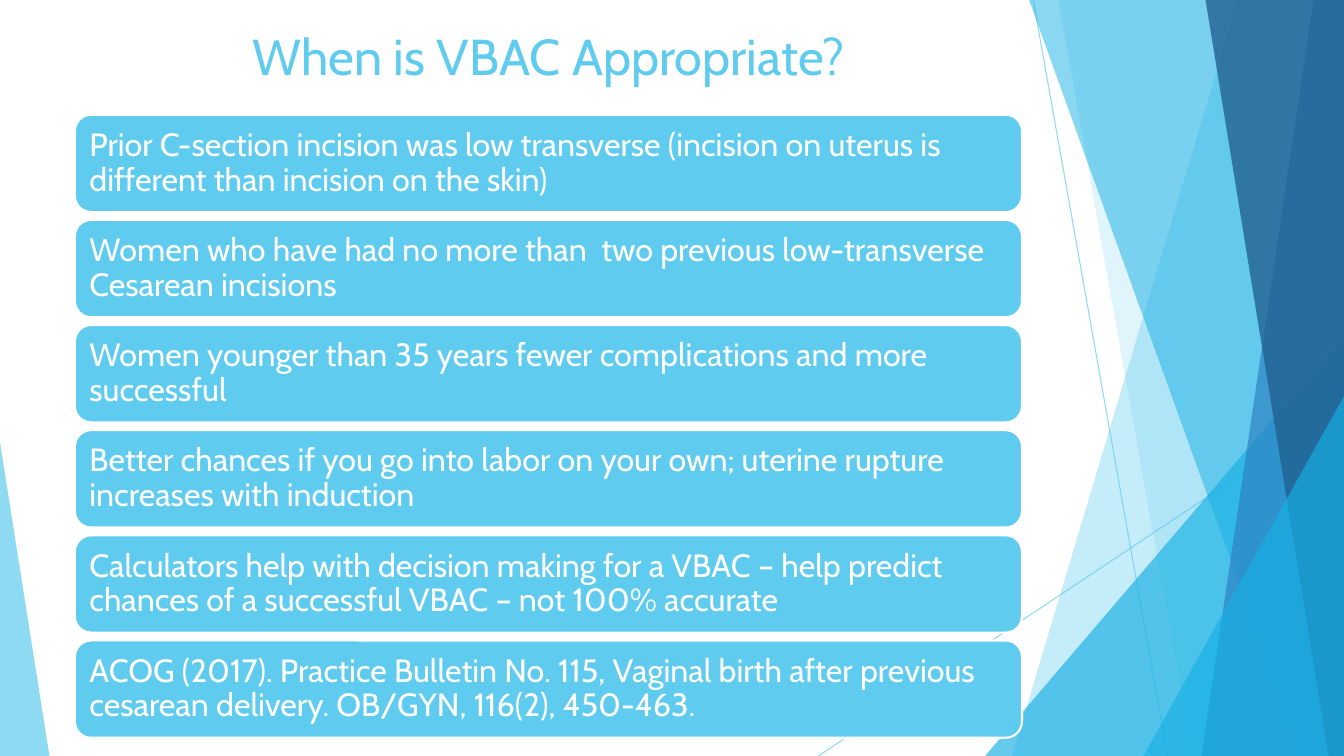
from lxml.etree import SubElement
from pptx import Presentation
from pptx.dml.color import RGBColor as RGB
from pptx.enum.shapes import MSO_CONNECTOR as CONNECTOR, MSO_SHAPE as SHAPE
from pptx.enum.text import MSO_ANCHOR as ANCHOR, PP_ALIGN as ALIGN
from pptx.oxml.ns import qn
from pptx.util import Pt

COLORS = {
    "sky": "5FCBEF",
    "cyan": "17B0E4",
    "blue": "2E83C3",
    "navy": "226292",
    "white": "FFFFFF",
}
FONT = "Cabin"
WIDTH, HEIGHT = 960, 540


def set_alpha(item, percent):
    for color in item._element.spPr.iter(qn("a:srgbClr")):
        SubElement(color, qn("a:alpha")).set("val", str(percent * 1000))


def paint(facet, color, percent):
    facet.shadow.inherit = False
    facet.fill.solid()
    facet.fill.fore_color.rgb = RGB.from_string(COLORS[color])
    facet.line.fill.background()
    set_alpha(facet, percent)


prs = Presentation()
prs.slide_width, prs.slide_height = Pt(WIDTH), Pt(HEIGHT)
slide = prs.slides.add_slide(prs.slide_layouts[6])
shapes = slide.shapes

for x1, y1, x2, y2 in [(738, 0, 834, HEIGHT), (WIDTH, 290, 584.6, HEIGHT)]:
    ray = shapes.add_connector(CONNECTOR.STRAIGHT, Pt(x1), Pt(y1), Pt(x2), Pt(y2))
    ray.line.color.rgb = RGB.from_string(COLORS["sky"])
    ray.line.width = Pt(0.75)
    set_alpha(ray, 70)
    SubElement(ray._element.spPr, qn("a:effectLst"))

# Bands give top and bottom x of the left edge; corners give left and top.
facets = [
    ("band", 884.2, 722.9, "sky", 36),
    ("band", 756, 851.8, "sky", 20),
    ("corner", 703.6, 240, "cyan", 66),
    ("band", 735.1, 929.5, "cyan", 50),
    ("band", 938.2, 858.2, "blue", 70),
    ("band", 861.1, 949, "navy", 80),
    ("corner", 816.7, 283, "cyan", 66),
]
for kind, first, second, color, percent in facets:
    if kind == "band":
        outline = shapes.build_freeform(Pt(first), 0)
        outline.add_line_segments(
            [(Pt(WIDTH), 0), (Pt(WIDTH), Pt(HEIGHT)), (Pt(second), Pt(HEIGHT))]
        )
        facet = outline.convert_to_shape()
    else:
        facet = shapes.add_shape(
            SHAPE.ISOSCELES_TRIANGLE,
            Pt(first), Pt(second), Pt(WIDTH - first), Pt(HEIGHT - second),
        )
        facet.adjustments[0] = 1
    paint(facet, color, percent)

left_corner = shapes.add_shape(
    SHAPE.ISOSCELES_TRIANGLE, 0, Pt(316), Pt(35.3), Pt(224)
)
left_corner.adjustments[0] = 0
paint(left_corner, "sky", 70)

title = shapes.add_textbox(Pt(53.5), Pt(14.4), Pt(676.5), Pt(77.8)).text_frame
title.word_wrap = True
heading = title.paragraphs[0]
heading.text = "When is VBAC Appropriate?"
heading.alignment = ALIGN.CENTER
heading.font.name = FONT
heading.font.size = Pt(36)
heading.font.color.rgb = RGB.from_string(COLORS["sky"])

criteria = [
    "Prior C-section incision was low transverse (incision on uterus is different than incision on the skin)",
    "Women who have had no more than  two previous low-transverse Cesarean incisions",
    "Women younger than 35 years fewer complications and more successful",
    "Better chances if you go into labor on your own; uterine rupture increases with induction",
    "Calculators help with decision making for a VBAC – help predict chances of a successful VBAC – not 100% accurate",
    "ACOG (2017). Practice Bulletin No. 115, Vaginal birth after previous cesarean delivery. OB/GYN, 116(2), 450-463.",
]
for row, criterion in enumerate(criteria):
    card = shapes.add_shape(
        SHAPE.ROUNDED_RECTANGLE, Pt(53.5), Pt(82 + 75.1 * row), Pt(676.5), Pt(69.5)
    )
    card.shadow.inherit = False
    card.fill.solid()
    card.fill.fore_color.rgb = RGB.from_string(COLORS["sky"])
    card.line.color.rgb = RGB.from_string(COLORS["white"])
    card.line.width = Pt(1.5)
    frame = card.text_frame
    frame.word_wrap = True
    frame.vertical_anchor = ANCHOR.MIDDLE
    frame.margin_left = frame.margin_right = Pt(7)
    frame.margin_top = frame.margin_bottom = Pt(7)
    statement = frame.paragraphs[0]
    statement.text = criterion
    statement.alignment = ALIGN.LEFT
    statement.line_spacing = 0.9
    statement.font.name = FONT
    statement.font.size = Pt(23)
    statement.font.color.rgb = RGB.from_string(COLORS["white"])

prs.save("out.pptx")
